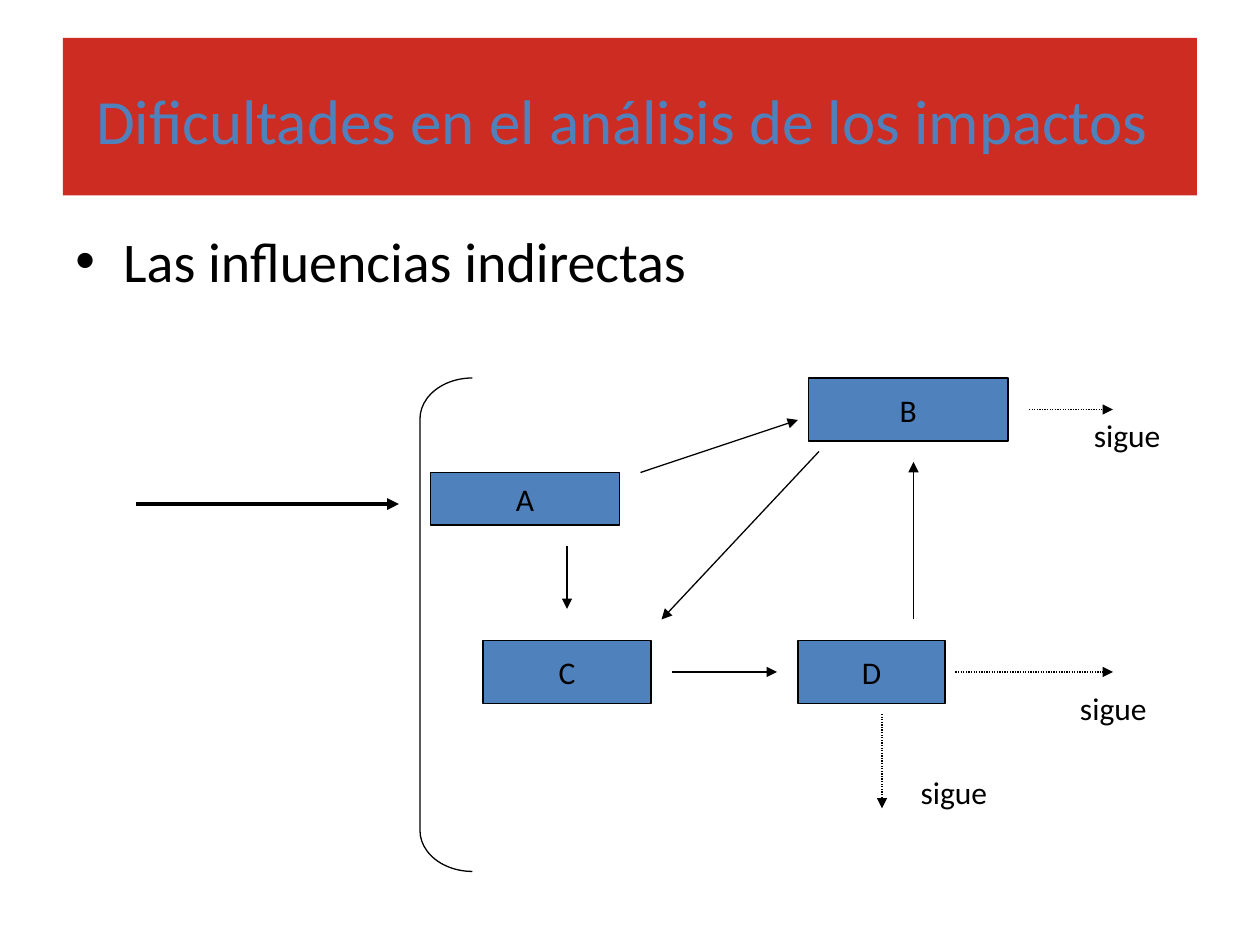
from lxml import etree
from pptx import Presentation, util as u
from pptx.dml.color import RGBColor
from pptx.enum import dml, shapes, text
from pptx.oxml import ns

presentation = Presentation()
presentation.slide_width = u.Inches(10)
presentation.slide_height = u.Inches(7.5)
slide = presentation.slides.add_slide(presentation.slide_layouts[6])
COLUMN = presentation.slide_width // 120
ROW = presentation.slide_height // 90
BLACK, BLUE, RED = "000000", "4F81BD", "CC2C22"


def paint(color_format, color):
    color_format.rgb = RGBColor.from_string(color)


def write(shape, words, size, align, anchor, wrap, color=BLACK):
    frame = shape.text_frame
    frame.word_wrap = wrap
    frame.vertical_anchor = anchor
    paragraph = frame.paragraphs[0]
    paragraph.alignment = align
    paragraph.add_run().text = words
    paragraph.font.name = "Calibri"
    paragraph.font.size = u.Pt(size)
    paint(paragraph.font.color, color)
    return paragraph


title = slide.shapes.add_shape(shapes.MSO_SHAPE.RECTANGLE, 6 * COLUMN, 3.6 * ROW, 108 * COLUMN, 15 * ROW)
title.shadow.inherit = False
title.fill.solid()
paint(title.fill.fore_color, RED)
title.line.fill.background()
heading = write(title, "Dificultades en el análisis de los impactos", 36,
                text.PP_ALIGN.CENTER, text.MSO_ANCHOR.MIDDLE, True, BLUE)
ending = heading.add_run()
ending.text = " "
ending.font.size = u.Pt(40)

body = slide.shapes.add_textbox(6 * COLUMN, 21 * ROW, 108 * COLUMN, 59.4 * ROW)
properties = body.text_frame.paragraphs[0]._p.get_or_add_pPr()
properties.set("marL", str(u.Inches(0.38)))
properties.set("indent", str(u.Inches(-0.38)))
etree.SubElement(properties, ns.qn("a:buFont"), typeface="Arial")
etree.SubElement(properties, ns.qn("a:buChar"), char="•")
write(body, "Las influencias indirectas", 32, text.PP_ALIGN.LEFT, text.MSO_ANCHOR.TOP, True)

for name, left, top, width, height in [
    ("A", 41, 45, 18, 5),
    ("B", 77, 36, 19, 6),
    ("C", 46, 61, 16, 6),
    ("D", 76, 61, 14, 6),
]:
    box = slide.shapes.add_shape(shapes.MSO_SHAPE.RECTANGLE, left * COLUMN, top * ROW,
                                 width * COLUMN, height * ROW)
    box.shadow.inherit = False
    box.fill.solid()
    paint(box.fill.fore_color, BLUE)
    paint(box.line.color, BLACK)
    box.line.width = u.Pt(0.75)
    write(box, name, 18, text.PP_ALIGN.CENTER, text.MSO_ANCHOR.MIDDLE, False)

for start_x, start_y, end_x, end_y, weight, dotted in [
    (13, 48, 38, 48, 2.25, False),
    (61, 45, 76, 40, 0.75, False),
    (54, 52, 54, 58, 0.75, False),
    (64, 64, 74, 64, 0.75, False),
    (87, 59, 87, 44, 0.75, False),
    (78, 43, 63, 59, 0.75, False),
    (98, 39, 106, 39, 0.75, True),
    (84, 68, 84, 77, 0.75, True),
    (91, 64, 106, 64, 0.75, True),
]:
    arrow = slide.shapes.add_connector(shapes.MSO_CONNECTOR.STRAIGHT, start_x * COLUMN, start_y * ROW,
                                       end_x * COLUMN, end_y * ROW)
    paint(arrow.line.color, BLACK)
    arrow.line.width = u.Pt(weight)
    if dotted:
        arrow.line.dash_style = dml.MSO_LINE.ROUND_DOT
    etree.SubElement(arrow.line._get_or_add_ln(), ns.qn("a:tailEnd"), type="triangle")
    etree.SubElement(arrow._element.spPr, ns.qn("a:effectLst"))

for words, left, top, width, height in [
    (" sigue", 101, 65, 11.9, 6),
    ("sigue", 103, 39, 10.8, 6),
    ("sigue", 86.5, 73, 10.8, 10.8),
]:
    label = slide.shapes.add_textbox(left * COLUMN, top * ROW, width * COLUMN, height * ROW)
    write(label, words, 18, text.PP_ALIGN.LEFT, text.MSO_ANCHOR.TOP, False)

bracket = slide.shapes.add_shape(shapes.MSO_SHAPE.LEFT_BRACKET, 40 * COLUMN, 36 * ROW, 5 * COLUMN, 47 * ROW)
bracket.shadow.inherit = False
bracket.adjustments[0] = 0.78
bracket.fill.background()
paint(bracket.line.color, BLACK)
bracket.line.width = u.Pt(0.75)

presentation.save("out.pptx")
